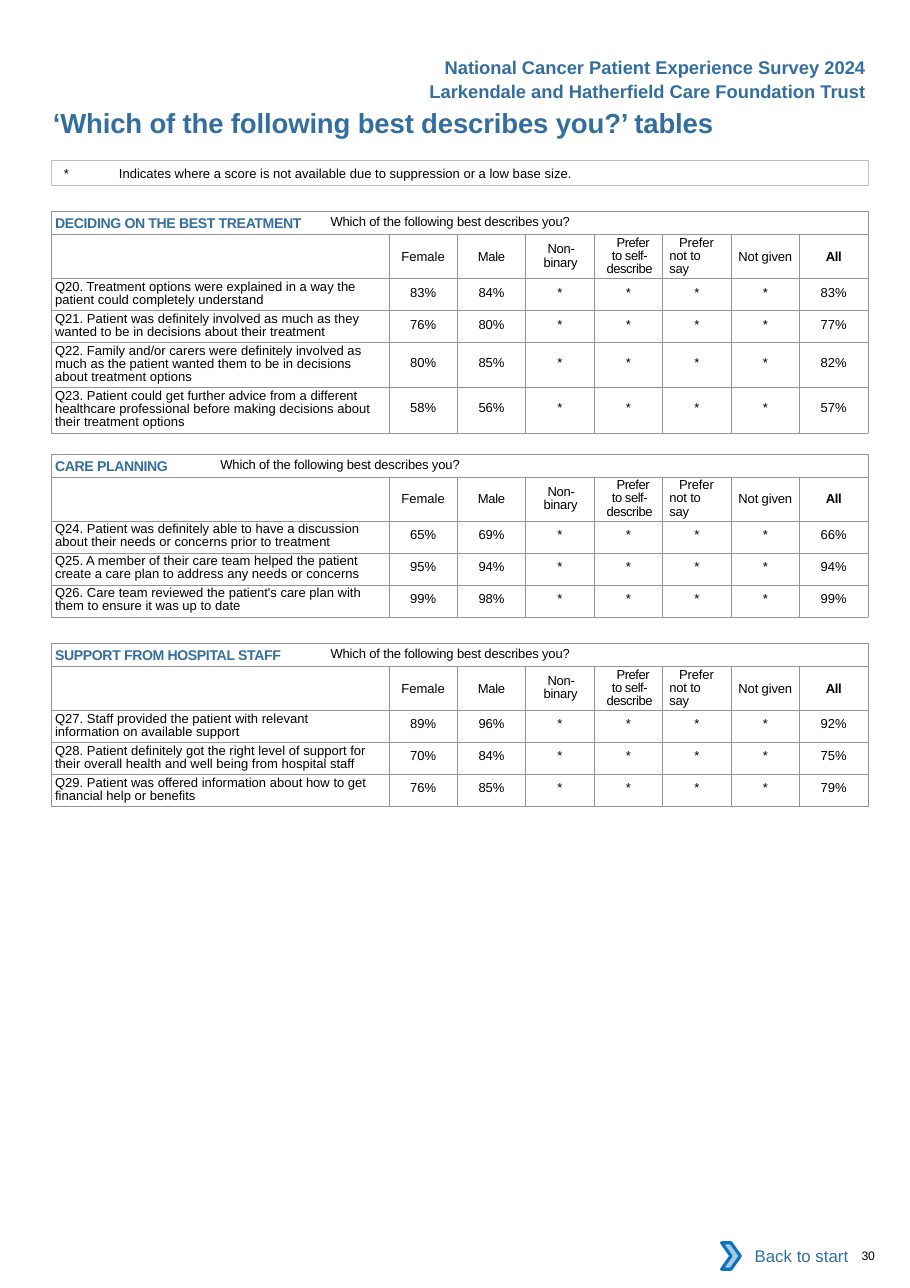
from lxml import etree
from pptx import Presentation
from pptx.dml.color import RGBColor
from pptx.enum import shapes, text
from pptx.oxml import ns
from pptx.util import Inches, Pt

COLORS = {"blue": "336E9F", "black": "000000", "grid": "939598", "frame": "BFBFBF",
          "white": "FFFFFF", "chevron": "A8C7E9", "chevron_edge": "0A74BB"}
LEFT, TOP, RIGHT, CENTER = 0.47, text.MSO_ANCHOR.TOP, text.PP_ALIGN.RIGHT, text.PP_ALIGN.CENTER
MIDDLE = text.MSO_ANCHOR.MIDDLE
TABLE_WIDTH, QUESTION_WIDTH = 7.41, 3.06
HEADING_HEIGHT, LABEL_HEIGHT = 0.21, 0.4
ROW_FORMATS = {2: (0.29, 0.06, 4.2), 3: (0.41, 0.12, 8.6)}

TITLE = "‘Which of the following best describes you?’ tables"
HEADERS = [
    ("Larkendale and Hatherfield Care Foundation Trust", 3.64, 0.68, 4.32),
    ("National Cancer Patient Experience Survey 2024", 3.92, 0.46, 4.04),
]
NOTE = "*\tIndicates where a score is not available due to suppression or a low base size."
GROUP_LABEL = "Which of the following best describes you?"
COLUMNS = [
    ("Female", dict(align=CENTER, before=8.3)),
    ("Male", dict(align=CENTER, before=8.3, spacing=-0.2)),
    ("Non- binary", dict(align=CENTER, before=5.6, line=8.6, indent=0.15, first=0.01,
                         right=0.14, spacing=-0.2)),
    ("Prefer to self- describe", dict(align=CENTER, before=1.3, line=8.6, indent=0.1,
                                      first=0.06, right=0.08, spacing=-0.3)),
    ("Prefer not to say", dict(before=5.6, line=8.6, indent=0.06, first=0.09,
                               right=0.1, spacing=-0.1)),
    ("Not given", dict(align=CENTER, before=8.3, spacing=-0.1)),
    ("All", dict(align=CENTER, before=8.3, bold=True, spacing=-0.2)),
]
SECTIONS = [
    ("DECIDING ON THE BEST TREATMENT", 1.92, [
        ("Q20. Treatment options were explained in a way the patient could completely understand",
         2, "83%", "84%", "83%"),
        ("Q21. Patient was definitely involved as much as they wanted to be in decisions "
         "about their treatment", 2, "76%", "80%", "77%"),
        ("Q22. Family and/or carers were definitely involved as much as the patient wanted "
         "them to be in decisions about treatment options", 3, "80%", "85%", "82%"),
        ("Q23. Patient could get further advice from a different healthcare professional "
         "before making decisions about their treatment options", 3, "58%", "56%", "57%"),
    ]),
    ("CARE PLANNING", 4.12, [
        ("Q24. Patient was definitely able to have a discussion about their needs or concerns "
         "prior to treatment", 2, "65%", "69%", "66%"),
        ("Q25. A member of their care team helped the patient create a care plan to address "
         "any needs or concerns", 2, "95%", "94%", "94%"),
        ("Q26. Care team reviewed the patient's care plan with them to ensure it was up to date",
         2, "99%", "98%", "99%"),
    ]),
    ("SUPPORT FROM HOSPITAL STAFF", 5.84, [
        ("Q27. Staff provided the patient with relevant information on available support",
         2, "89%", "96%", "92%"),
        ("Q28. Patient definitely got the right level of support for their overall health and "
         "well being from hospital staff", 2, "70%", "84%", "75%"),
        ("Q29. Patient was offered information about how to get financial help or benefits",
         2, "76%", "85%", "79%"),
    ]),
]


def color(name):
    return RGBColor.from_string(COLORS[name])


def add_text(para, words, size=8.5, ink="black", bold=False, spacing=0, baseline=0,
             align=None, before=0, line=None, indent=0, first=0, tab=None):
    span = para.add_run()
    span.text = words
    span.font.name, span.font.size, span.font.bold = "Arial", Pt(size), bold
    span.font.color.rgb = color(ink)
    marks = span.font._element
    if spacing:
        marks.set("spc", str(round(spacing * 100)))
    if baseline:
        marks.set("baseline", str(baseline * 1000))
    if align is not None:
        para.alignment = align
    if before:
        para.space_before = Pt(before)
    if line:
        para.line_spacing = Pt(line)
    layout = para._p.get_or_add_pPr()
    if indent or first:
        layout.set("marL", str(Inches(indent)))
        layout.set("indent", str(Inches(first)))
    if tab:
        stops = etree.SubElement(layout, ns.qn("a:tabLst"))
        etree.SubElement(stops, ns.qn("a:tab"), pos=str(Inches(tab)), algn="l")


def set_frame(shape, margins=(0, 0, 0, 0), anchor=TOP, wrap=True):
    frame = shape.text_frame
    frame.auto_size, frame.word_wrap = text.MSO_AUTO_SIZE.NONE, wrap
    frame.vertical_anchor = anchor
    (frame.margin_left, frame.margin_top,
     frame.margin_right, frame.margin_bottom) = map(Inches, margins)
    return frame.paragraphs[0]


def add_box(page, kind, place, fill=None, edge=None, width=0.5):
    shape = page.shapes.add_shape(kind, *map(Inches, place))
    shape.shadow.inherit = False
    if fill:
        shape.fill.solid()
        shape.fill.fore_color.rgb = color(fill)
    else:
        shape.fill.background()
    if edge:
        shape.line.color.rgb = color(edge)
        shape.line.width = Pt(width)
    else:
        shape.line.fill.background()
    return shape


def draw_borders(cell):
    holder = cell._tc.get_or_add_tcPr()
    for side in ("lnL", "lnR", "lnT", "lnB"):
        border = etree.SubElement(holder, ns.qn("a:" + side), w=str(Pt(0.5)))
        solid = etree.SubElement(border, ns.qn("a:solidFill"))
        etree.SubElement(solid, ns.qn("a:srgbClr"), val=COLORS["grid"])


def fill_cell(cell, words, top=0, right=0, anchor=TOP, **style):
    cell.margin_top, cell.margin_right = Inches(top), Inches(right)
    cell.vertical_anchor = anchor
    add_text(cell.text_frame.paragraphs[0], words, **style)


def add_section(page, heading, top, questions):
    heights = [HEADING_HEIGHT, LABEL_HEIGHT] + [ROW_FORMATS[item[1]][0] for item in questions]
    place = (LEFT, top, TABLE_WIDTH, sum(heights))
    table = page.shapes.add_table(len(heights), len(COLUMNS) + 1, *map(Inches, place)).table
    table.first_row = table.horz_banding = False
    for index, column in enumerate(table.columns):
        share = (TABLE_WIDTH - QUESTION_WIDTH) / len(COLUMNS)
        column.width = Inches(share if index else QUESTION_WIDTH)
    for row, height in zip(table.rows, heights):
        row.height = Inches(height)
        for cell in row.cells:
            cell.margin_left = cell.margin_right = cell.margin_top = cell.margin_bottom = 0
            draw_borders(cell)
            cell.fill.background()

    banner = table.cell(0, 0)
    banner.merge(table.cell(0, len(COLUMNS)))
    fill_cell(banner, heading + "\t", anchor=MIDDLE, size=15.8, ink="blue", bold=True,
              spacing=-0.2, baseline=-8, line=11.8, indent=0.03, tab=4.24)
    add_text(banner.text_frame.paragraphs[0], GROUP_LABEL, spacing=-0.1)
    for index, (label, style) in enumerate(COLUMNS, 1):
        fill_cell(table.cell(1, index), label, anchor=MIDDLE, **style)
    for row, (question, lines, female, male, total) in enumerate(questions, 2):
        fill_cell(table.cell(row, 0), question, top=0.02, right=0.14,
                  before=1.6, line=8.6, indent=0.03)
        height, inset, before = ROW_FORMATS[lines]
        for index, score in enumerate([female, male] + ["*"] * 4 + [total], 1):
            fill_cell(table.cell(row, index), score, top=inset, align=CENTER, before=before)


def main():
    deck = Presentation()
    deck.slide_width, deck.slide_height = Inches(8.26), Inches(11.69)
    page = deck.slides.add_slide(deck.slide_layouts[5])

    number = page.shapes.add_textbox(*map(Inches, (7.72, 11.33, 0.51, 0.13)))
    add_text(set_frame(number), "30", size=8, indent=0.1, before=0.2, spacing=-0.2)

    title = page.shapes.title
    title.left, title.top, title.width, title.height = map(Inches, (LEFT, 0.96, 6.25, 0.3))
    add_text(set_frame(title), TITLE, size=18, ink="blue", bold=True, spacing=-0.1,
             align=text.PP_ALIGN.LEFT, before=4.1, indent=0.01)

    for section in SECTIONS:
        add_section(page, *section)

    note = add_box(page, shapes.MSO_SHAPE.RECTANGLE, (LEFT, 1.46, TABLE_WIDTH, 0.22), edge="frame")
    add_text(set_frame(note, (0, 0.04, 0, 0.04)), NOTE, align=text.PP_ALIGN.LEFT,
             before=9.1, indent=0.11, tab=0.34)

    for words, left, top, width in HEADERS:
        header = page.shapes.add_textbox(*map(Inches, (left, top, width, 0.3)))
        add_text(set_frame(header, (0.1, 0.05, 0.1, 0.05), wrap=False), words,
                 size=12, ink="blue", bold=True, align=RIGHT)

    button = add_box(page, shapes.MSO_SHAPE.RECTANGLE, (6.62, 11.19, 1.18, 0.42), fill="white")
    add_text(set_frame(button, (0.1, 0.05, 0.1, 0.05), MIDDLE), "Back to start",
             size=11, ink="blue", align=RIGHT)
    add_box(page, shapes.MSO_SHAPE.CHEVRON, (6.55, 11.28, 0.17, 0.24),
            fill="chevron", edge="chevron_edge", width=2)
    deck.save("out.pptx")


if __name__ == "__main__":
    main()
